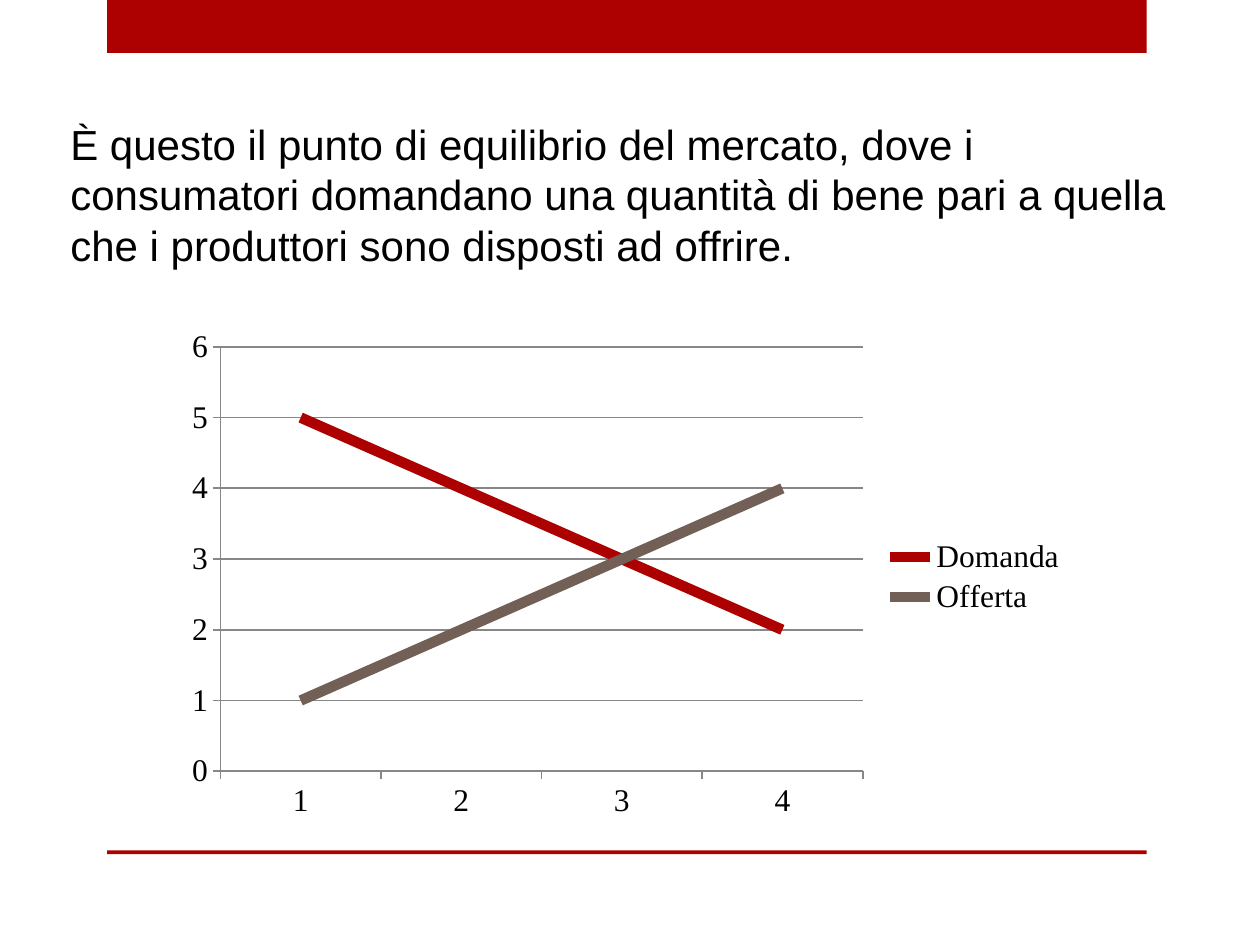
"""Build a slide on market equilibrium with a demand and supply line chart."""
from lxml import etree
from pptx import Presentation
from pptx.chart.data import CategoryChartData
from pptx.dml.color import RGBColor
from pptx.enum.chart import XL_CHART_TYPE, XL_LEGEND_POSITION, XL_MARKER_STYLE, XL_TICK_MARK
from pptx.enum.shapes import MSO_SHAPE
from pptx.oxml.ns import qn
from pptx.util import Inches, Pt

LINE, RIGHT = XL_CHART_TYPE.LINE, XL_LEGEND_POSITION.RIGHT
NO_MARKER, OUTSIDE = XL_MARKER_STYLE.NONE, XL_TICK_MARK.OUTSIDE
RECT = MSO_SHAPE.RECTANGLE

TEXT = ("È questo il punto di equilibrio del mercato, dove i consumatori domandano "
        "una quantità di bene pari a quella che i produttori sono disposti ad offrire.")
CATEGORIES = ["1", "2", "3", "4"]
SERIES = [("Domanda", (5, 4, 3, 2), "red"), ("Offerta", (1, 2, 3, 4), "brown")]

BARS = [(0.85, 0, 8.25, 0.42), (0.85, 6.75, 8.25, 0.03)]
TEXT_BOX = (0.46, 0.89, 9.08, 1.31)
CHART_BOX = (1.39, 2.55, 7.18, 4.06)
PLOT_LAYOUT = {"layoutTarget": "inner", "xMode": "edge", "yMode": "edge",
               "x": 0.05, "y": 0.05, "w": 0.71, "h": 0.83}

THEME = {
    "red": RGBColor(0xAD, 0x01, 0x01),
    "brown": RGBColor(0x72, 0x60, 0x56),
    "grid": RGBColor(0x87, 0x87, 0x87),
    "text": {"name": "Arial", "size": Pt(24), "color": RGBColor(0, 0, 0)},
    "chart": {"name": "Times New Roman", "size": Pt(18), "color": RGBColor(0, 0, 0)},
    "series_width": Pt(6),
    "grid_width": Pt(1),
}


def box(values):
    return [Inches(v) for v in values]


def set_font(font, style):
    for key, value in style.items():
        if key == "color":
            font.color.rgb = value
        else:
            setattr(font, key, value)


def set_line(line, color, width):
    line.color.rgb = THEME[color]
    line.width = THEME[width]


def add_bar(s, position):
    bar = s.shapes.add_shape(RECT, *box(position))
    bar.shadow.inherit = False
    bar.fill.solid()
    bar.fill.fore_color.rgb = THEME["red"]
    bar.line.fill.background()


def add_text(s):
    tf = s.shapes.add_textbox(*box(TEXT_BOX)).text_frame
    tf.word_wrap = True
    r = tf.paragraphs[0].add_run()
    r.text = TEXT
    set_font(r.font, THEME["text"])


def set_plot_layout(chart):
    area = chart.element.find(".//" + qn("c:plotArea"))
    layout = area.find(qn("c:layout"))
    if layout is None:
        layout = etree.Element(qn("c:layout"))
        area.insert(0, layout)
    manual = etree.SubElement(layout, qn("c:manualLayout"))
    for tag, value in PLOT_LAYOUT.items():
        etree.SubElement(manual, qn("c:" + tag)).set("val", str(value))


def add_chart(s):
    data = CategoryChartData()
    data.categories = CATEGORIES
    for name, values, _ in SERIES:
        data.add_series(name, values)
    chart = s.shapes.add_chart(LINE, *box(CHART_BOX), data).chart
    set_font(chart.font, THEME["chart"])
    chart.has_title = False
    chart.has_legend = True
    chart.legend.position = RIGHT
    chart.legend.include_in_layout = False
    set_plot_layout(chart)

    for axis in (chart.category_axis, chart.value_axis):
        axis.major_tick_mark = OUTSIDE
        set_line(axis.format.line, "grid", "grid_width")
    scale = chart.value_axis
    scale.minimum_scale, scale.maximum_scale, scale.major_unit = 0, 6, 1
    scale.has_major_gridlines = True
    set_line(scale.major_gridlines.format.line, "grid", "grid_width")

    plot = chart.plots[0]
    plot.vary_by_categories = False
    for series, (_, _, color) in zip(plot.series, SERIES):
        series.smooth = False
        series.marker.style = NO_MARKER
        set_line(series.format.line, color, "series_width")


def main():
    prs = Presentation()
    prs.slide_width, prs.slide_height = Inches(10), Inches(7.5)
    s = prs.slides.add_slide(prs.slide_layouts[6])
    for position in BARS:
        add_bar(s, position)
    add_text(s)
    add_chart(s)
    prs.save("out.pptx")


if __name__ == "__main__":
    main()
